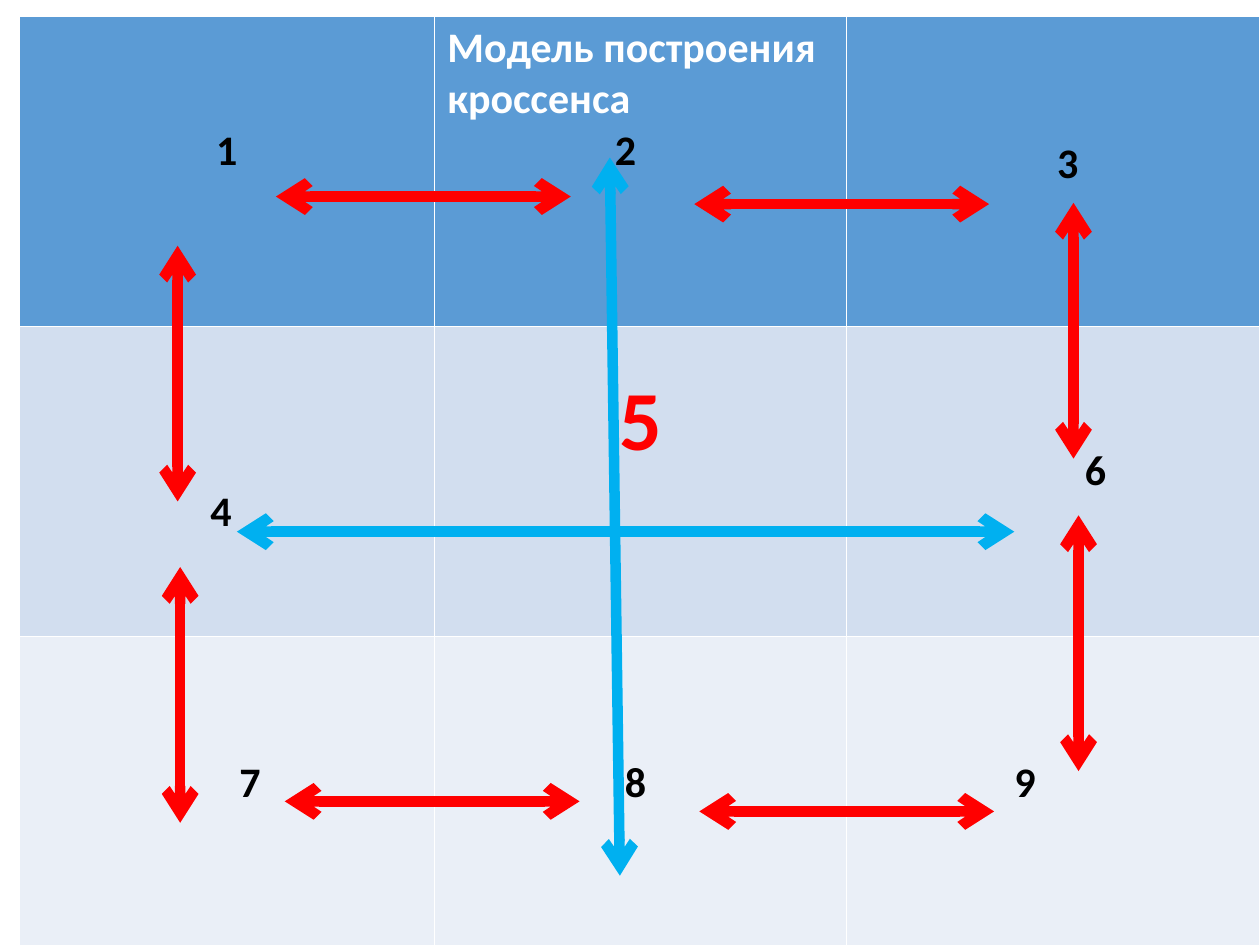
import pptx
import pptx.util
import pptx.dml.color
import pptx.enum.shapes
import pptx.enum.text
import pptx.oxml.ns
from lxml import etree

Inches = pptx.util.Inches
FONT = "Calibri"
COLORS = {
    "header": "5B9BD5",
    "band_dark": "D2DEEF",
    "band_light": "EAEFF7",
    "white": "FFFFFF",
    "black": "000000",
    "red": "FF0000",
    "blue": "00B0F0",
}
ROW_FILLS = ["header", "band_dark", "band_light"]
COLUMN_WIDTHS = [3.3, 3.27, 3.28]
ROW_HEIGHT = 2.46
TITLE = "Модель построения кроссенса"
CENTERED = None

NUMBER_OFFSETS = {
    1: (CENTERED, 0.87),
    3: (1.67, 0.97),
    4: (1.52, 1.27),
    5: (CENTERED, 0.35),
    6: (1.89, 0.95),
    7: (1.75, 0.96),
    8: (1.51, 0.96),
    9: (1.33, 0.96),
}

HORIZONTAL_LINKS = [(2.19, 1.56), (5.51, 1.62), (2.26, 6.36), (5.55, 6.44)]
HORIZONTAL_LENGTH = 2.34
VERTICAL_LINKS = [(1.41, 1.95), (8.52, 1.61), (1.43, 4.5), (8.56, 4.09)]
VERTICAL_LENGTH = 2.03
CROSS_LINKS = [(4.84, 1.25, 4.92, 6.95), (1.88, 4.22, 8.05, 4.22)]


def color(name):
    return pptx.dml.color.RGBColor.from_string(COLORS[name])


def write_paragraph(paragraph, text, color_name, size=24):
    paragraph.text = text
    font = paragraph.runs[0].font
    font.name = FONT
    font.size = pptx.util.Pt(size)
    font.bold = True
    font.color.rgb = color(color_name)


def write_number(cell, number):
    left, top = NUMBER_OFFSETS[number]
    paragraph = cell.text_frame.paragraphs[0]
    if number == 5:
        write_paragraph(paragraph, str(number), "red", 48)
    else:
        write_paragraph(paragraph, str(number), "black")
    cell.margin_top = Inches(top)
    if left is CENTERED:
        paragraph.alignment = pptx.enum.text.PP_ALIGN.CENTER
    else:
        cell.margin_left = Inches(left)


def write_title_cell(cell):
    write_paragraph(cell.text_frame.paragraphs[0], TITLE, "white")
    number = cell.text_frame.add_paragraph()
    write_paragraph(number, "2", "black")
    number._p.get_or_add_pPr().set("marL", str(Inches(1.33)))


def add_grid(slide):
    frame = slide.shapes.add_table(
        3, 3, Inches(0.15), Inches(0.13), Inches(sum(COLUMN_WIDTHS)), Inches(3 * ROW_HEIGHT)
    )
    table = frame.table
    for column, width in zip(table.columns, COLUMN_WIDTHS):
        column.width = Inches(width)
    for row_index, row in enumerate(table.rows):
        row.height = Inches(ROW_HEIGHT)
        for column_index, cell in enumerate(row.cells):
            cell.fill.solid()
            cell.fill.fore_color.rgb = color(ROW_FILLS[row_index])
            number = 3 * row_index + column_index + 1
            if number == 2:
                write_title_cell(cell)
            else:
                write_number(cell, number)


def add_double_arrow(slide, left, top, right, bottom, color_name):
    connector = slide.shapes.add_connector(
        pptx.enum.shapes.MSO_CONNECTOR.STRAIGHT,
        Inches(left), Inches(top), Inches(right), Inches(bottom),
    )
    connector.line.color.rgb = color(color_name)
    connector.line.width = pptx.util.Pt(6)
    line = connector.line._get_or_add_ln()
    for end in ("a:headEnd", "a:tailEnd"):
        etree.SubElement(line, pptx.oxml.ns.qn(end), type="arrow")
    etree.SubElement(connector._element.spPr, pptx.oxml.ns.qn("a:effectLst"))


def main():
    presentation = pptx.Presentation()
    presentation.slide_width = Inches(10)
    presentation.slide_height = Inches(7.5)
    slide = presentation.slides.add_slide(presentation.slide_layouts[6])
    add_grid(slide)
    for left, top in HORIZONTAL_LINKS:
        add_double_arrow(slide, left, top, left + HORIZONTAL_LENGTH, top, "red")
    for left, top in VERTICAL_LINKS:
        add_double_arrow(slide, left, top, left, top + VERTICAL_LENGTH, "red")
    for ends in CROSS_LINKS:
        add_double_arrow(slide, *ends, "blue")
    presentation.save("out.pptx")


if __name__ == "__main__":
    main()
